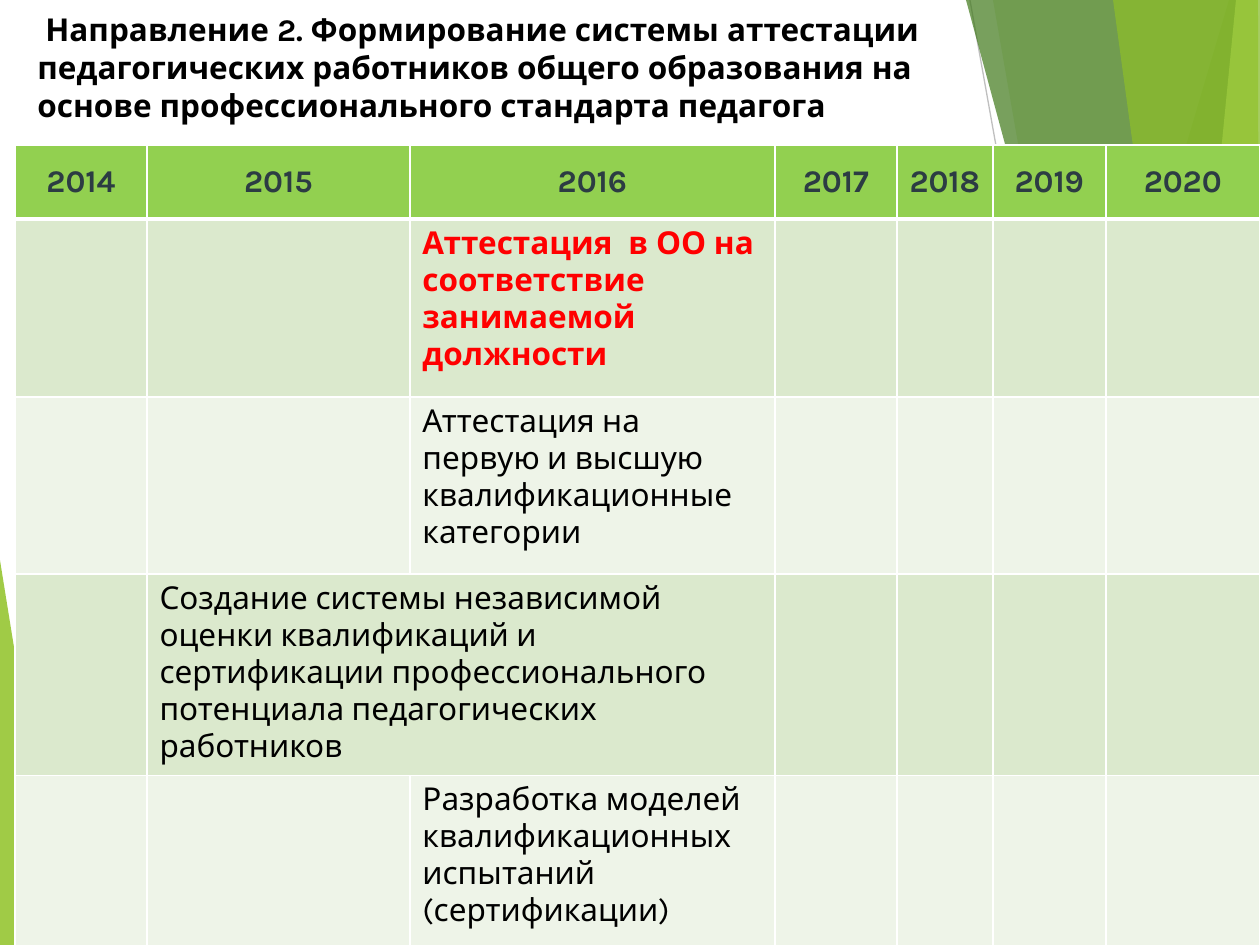
from lxml.etree import SubElement
from pptx import Presentation
from pptx.dml.color import RGBColor
from pptx.enum.shapes import MSO_CONNECTOR
from pptx.enum.text import MSO_ANCHOR, PP_ALIGN
from pptx.oxml import parse_xml
from pptx.oxml.ns import nsdecls, qn
from pptx.util import Pt

SCALE = 914400 / 126  # EMU in one px
FONT = "Karla"
BLACK = RGBColor(0, 0, 0)
RED = RGBColor(0xFF, 0, 0)
SLATE = RGBColor(0x2C, 0x3C, 0x43)
HEAD = RGBColor(0x92, 0xD0, 0x50)
BANDS = [RGBColor(0xDB, 0xE9, 0xCD), RGBColor(0xEE, 0xF4, 0xE8)]
LIME = RGBColor(0x90, 0xC2, 0x26)
GREEN = RGBColor(0x54, 0xA0, 0x21)
DARK = RGBColor(0x3F, 0x78, 0x19)
PALE = RGBColor(0xC0, 0xE4, 0x74)
GREY = RGBColor(0xBF, 0xBF, 0xBF)
SILVER = RGBColor(0xD9, 0xD9, 0xD9)


def px(n):
    return round(n * SCALE)


def write(frame, text, color, bold):
    frame.text = text
    for run in frame.paragraphs[0].runs:
        run.font.name = FONT
        run.font.size = Pt(18)
        run.font.bold = bold
        run.font.color.rgb = color


deck = Presentation()
deck.slide_width, deck.slide_height = px(1260), px(945)
slide = deck.slides.add_slide(deck.slide_layouts[6])
shapes = slide.shapes

# Thin slanted lines
for x1, y1, x2, y2, color in [(707, 945, 1260, 576, SILVER), (970, 0, 1139, 945, GREY)]:
    line = shapes.add_connector(MSO_CONNECTOR.STRAIGHT, px(x1), px(y1), px(x2), px(y2))
    line.line.color.rgb = color
    line.line.width = Pt(0.75)
    SubElement(line._element.spPr, qn("a:effectLst"))

# Translucent facets: points, colour, opacity in percent
facets = [
    ([(0, 560), (62, 945), (0, 945)], LIME, 85),
    ([(1229, 0), (950, 945), (1260, 945), (1260, 0)], LIME, 30),
    ([(993, 0), (1158, 945), (1260, 945), (1260, 0)], LIME, 20),
    ([(915, 945), (1260, 541), (1260, 945)], GREEN, 72),
    ([(966, 0), (1222, 945), (1260, 945), (1260, 0)], DARK, 70),
    ([(1236, 0), (1143, 945), (1260, 945), (1260, 0)], PALE, 70),
    ([(1113, 0), (1242, 945), (1260, 945), (1258, 0)], LIME, 65),
    ([(1110, 945), (1260, 674), (1260, 945)], LIME, 80),
]
for points, color, alpha in facets:
    pen = shapes.build_freeform(*points[0], scale=SCALE)
    pen.add_line_segments(points[1:], close=True)
    facet = pen.convert_to_shape()
    facet.shadow.inherit = False
    facet.line.fill.background()
    facet.fill.solid()
    facet.fill.fore_color.rgb = color
    tint = facet._element.spPr.find(qn("a:solidFill"))[0]
    SubElement(tint, qn("a:alpha")).set("val", str(alpha * 1000))

# Title
title = shapes.add_textbox(px(25), px(4), px(1022), px(131)).text_frame
title.word_wrap = True
write(title, " Направление 2. Формирование системы аттестации педагогических "
      "работников общего образования на основе профессионального стандарта педагога",
      BLACK, True)

# Table grid
widths = [132, 263, 365, 122, 96, 113, 154]
heights = [74, 178, 177, 198, 178]
table = shapes.add_table(5, 7, px(15), px(145), px(sum(widths)), px(sum(heights))).table
for col, width in zip(table.columns, widths):
    col.width = px(width)
for row, height in zip(table.rows, heights):
    row.height = px(height)
table.cell(3, 1).merge(table.cell(3, 2))

# Fills and white borders, thicker under the header
for r, row in enumerate(table.rows):
    for cell in row.cells:
        cell.fill.solid()
        cell.fill.fore_color.rgb = BANDS[(r - 1) % 2] if r else HEAD
        props = cell._tc.get_or_add_tcPr()
        for i, side in enumerate("LRTB"):
            thick = (r, side) in [(0, "B"), (1, "T")]
            width = Pt(3 if thick else 1)
            edge = parse_xml(
                f'<a:ln{side} {nsdecls("a")} w="{width}"><a:solidFill>'
                f'<a:srgbClr val="FFFFFF"/></a:solidFill></a:ln{side}>')
            props.insert(i, edge)

# Header years
for c in range(7):
    cell = table.cell(0, c)
    write(cell.text_frame, str(2014 + c), SLATE, True)
    cell.text_frame.paragraphs[0].alignment = PP_ALIGN.CENTER
    cell.vertical_anchor = MSO_ANCHOR.MIDDLE
    cell.margin_left = cell.margin_right = px(9)

# Tasks
tasks = [
    (1, 2, "Аттестация  в ОО на соответствие занимаемой должности"),
    (2, 2, "Аттестация на первую и высшую квалификационные категории"),
    (3, 1, "Создание системы независимой оценки квалификаций и сертификации "
           "профессионального потенциала педагогических работников"),
    (4, 2, "Разработка моделей квалификационных испытаний (сертификации)"),
]
for r, c, text in tasks:
    first = r == 1
    write(table.cell(r, c).text_frame, text, RED if first else BLACK, first)

deck.save("out.pptx")
